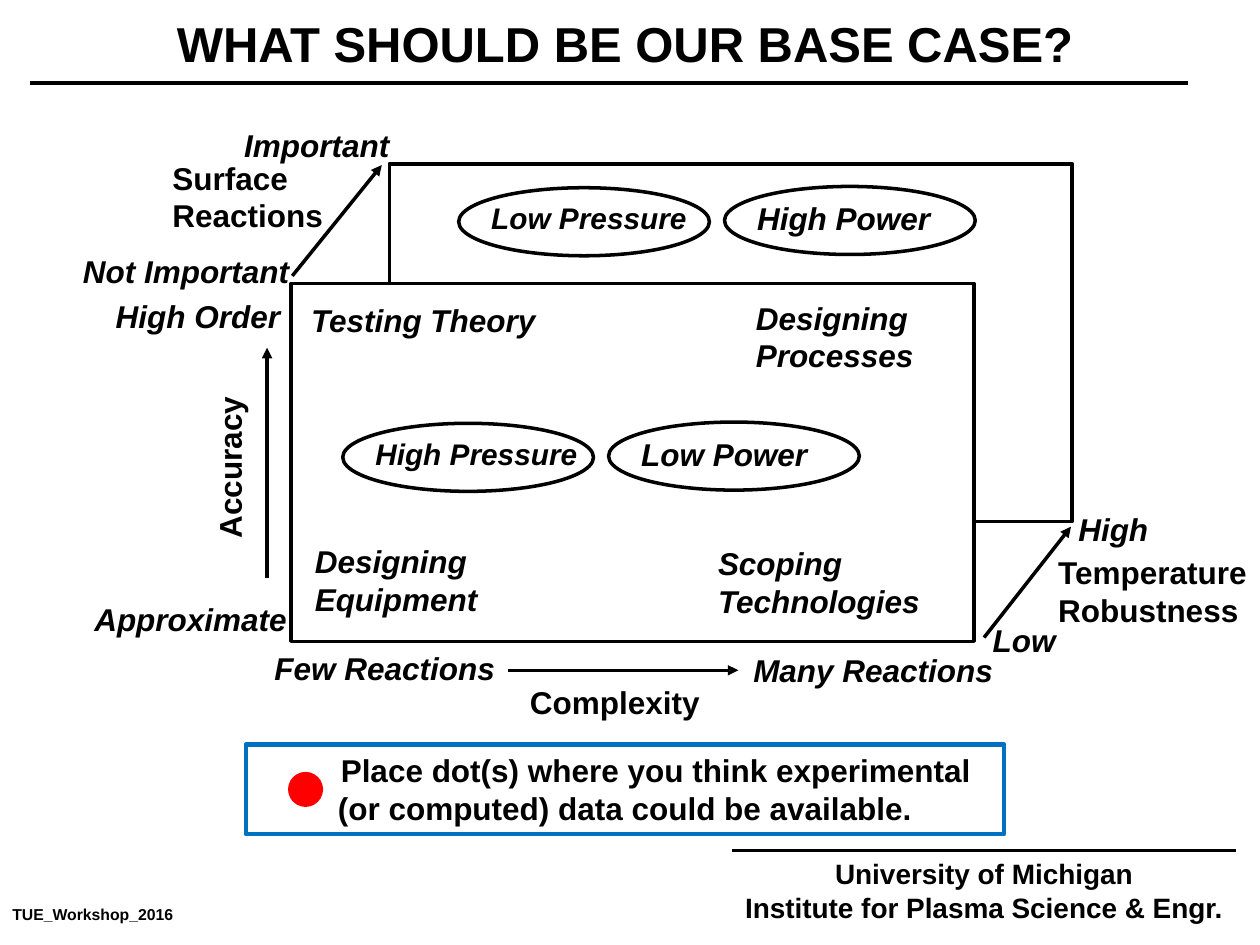
from dataclasses import dataclass

from lxml.etree import SubElement
from pptx import Presentation
from pptx.dml.color import RGBColor
from pptx.enum.shapes import MSO_CONNECTOR, MSO_SHAPE
from pptx.enum.text import MSO_ANCHOR, MSO_AUTO_SIZE, PP_ALIGN
from pptx.oxml.ns import qn
from pptx.util import Emu, Pt

EMU_PER_PX = 9144  # 100 px to the inch


@dataclass(frozen=True)
class Theme:
    font: str = "Arial"
    ink: RGBColor = RGBColor(0, 0, 0)
    paper: RGBColor = RGBColor(255, 255, 255)
    dot: RGBColor = RGBColor(255, 0, 0)
    frame: RGBColor = RGBColor(0, 0x70, 0xC0)
    title_size: int = 28
    label_size: int = 18
    tight_size: int = 17
    footer_size: int = 16
    tag_size: int = 9
    line_width: float = 2
    rule_width: float = 2.25
    frame_width: float = 2.5


THEME = Theme()


@dataclass(frozen=True)
class Box:
    left: int
    top: int
    width: int
    height: int

    def emu(self) -> tuple:
        return tuple(px(n) for n in (self.left, self.top, self.width, self.height))


@dataclass(frozen=True)
class Label:
    lines: tuple
    box: Box
    italic: bool = True
    size: int = THEME.label_size
    align: PP_ALIGN = PP_ALIGN.LEFT
    space_after: int = 6
    rotation: int = 0


@dataclass(frozen=True)
class Regime:
    """An oval with the name of an operating regime inside."""
    name: str
    left: int
    top: int
    size: int = THEME.label_size


@dataclass(frozen=True)
class Stroke:
    start: tuple
    end: tuple
    width: float = THEME.line_width
    arrow: bool = True


PLANES = (Box(309, 130, 542, 284), Box(231, 225, 542, 284))

REGIMES = (
    Regime("Low Pressure", 364, 149, THEME.tight_size),
    Regime("High Power", 575, 148),
    Regime("High Pressure", 272, 336, THEME.tight_size),
    Regime("Low Power", 483, 335),
)

STROKES = (
    Stroke((24, 66), (943, 66), THEME.rule_width, arrow=False),
    Stroke((581, 675), (981, 675), THEME.rule_width, arrow=False),
    Stroke((403, 532), (586, 532)),  # complexity
    Stroke((212, 459), (212, 276)),  # accuracy
    Stroke((232, 219), (303, 131)),  # surface reactions
    Stroke((781, 506), (850, 418)),  # temperature robustness
)

LABELS = (
    Label(("Testing Theory",), Box(237, 234, 229, 40)),
    Label(("Designing Processes",), Box(590, 232, 175, 71)),
    Label(("Designing Equipment",), Box(240, 425, 212, 71)),
    Label(("Scoping Technologies",), Box(560, 427, 212, 71)),
    Label(("Important",), Box(184, 95, 146, 40)),
    Label(("Not Important",), Box(56, 195, 195, 40)),
    Label(("High Order",), Box(82, 231, 219, 40)),
    Label(("Approximate",), Box(65, 471, 219, 40)),
    Label(("Few Reactions",), Box(208, 510, 219, 40)),
    Label(("Many Reactions",), Box(588, 512, 238, 40)),
    Label(("Low",), Box(778, 488, 80, 40)),
    Label(("High",), Box(846, 400, 91, 40)),
    Label(("Surface", "Reactions"), Box(127, 121, 238, 71), italic=False, space_after=0),
    Label(("Temperature", "Robustness"), Box(830, 434, 238, 71), italic=False, space_after=0),
    Label(("Complexity",), Box(382, 537, 212, 40), italic=False, align=PP_ALIGN.CENTER),
    Label(("Accuracy",), Box(76, 351, 212, 40), italic=False, align=PP_ALIGN.CENTER,
          rotation=-90),
    Label(("University of Michigan", "Institute for Plasma Science & Engr."),
          Box(575, 675, 412, 64), italic=False, size=THEME.footer_size,
          align=PP_ALIGN.CENTER, space_after=0),
    Label(("TUE_Workshop_2016",), Box(0, 713, 150, 25), italic=False,
          size=THEME.tag_size, space_after=0),
)


def px(length: int) -> Emu:
    return Emu(length * EMU_PER_PX)


def write(text_frame, label: Label) -> None:
    text_frame.word_wrap = True
    text_frame.auto_size = MSO_AUTO_SIZE.NONE
    text_frame.vertical_anchor = MSO_ANCHOR.TOP
    for number, line in enumerate(label.lines):
        paragraph = text_frame.add_paragraph() if number else text_frame.paragraphs[0]
        paragraph.alignment = label.align
        paragraph.space_after = Pt(label.space_after)
        run = paragraph.add_run()
        run.text = line
        run.font.name = THEME.font
        run.font.size = Pt(label.size)
        run.font.bold = True
        run.font.italic = label.italic
        run.font.color.rgb = THEME.ink


def add_label(slide, label: Label) -> None:
    shape = slide.shapes.add_textbox(*label.box.emu())
    shape.rotation = label.rotation
    write(shape.text_frame, label)


def add_outline(slide, kind: MSO_SHAPE, box: Box, fill: RGBColor | None = None,
                line: RGBColor = THEME.ink, width: float = THEME.line_width):
    shape = slide.shapes.add_shape(kind, *box.emu())
    shape.shadow.inherit = False
    if fill is None:
        shape.fill.background()
    else:
        shape.fill.solid()
        shape.fill.fore_color.rgb = fill
    shape.line.color.rgb = line
    shape.line.width = Pt(width)
    return shape


def add_regime(slide, regime: Regime) -> None:
    add_outline(slide, MSO_SHAPE.OVAL, Box(regime.left, regime.top, 199, 54))
    box = Box(regime.left + 16, regime.top + 5, 185, 40)
    add_label(slide, Label((regime.name,), box, size=regime.size))


def add_stroke(slide, stroke: Stroke) -> None:
    ends = [px(n) for n in stroke.start + stroke.end]
    connector = slide.shapes.add_connector(MSO_CONNECTOR.STRAIGHT, *ends)
    connector.line.color.rgb = THEME.ink
    connector.line.width = Pt(stroke.width)
    if stroke.arrow:
        SubElement(connector.line._get_or_add_ln(), qn("a:tailEnd"), type="triangle")
    SubElement(connector._element.spPr, qn("a:effectLst"))


def add_title(slide) -> None:
    title = slide.shapes.title
    box = Box(14, 6, 964, 57)
    title.left, title.top, title.width, title.height = box.emu()
    write(title.text_frame, Label(("WHAT SHOULD BE OUR BASE CASE?",), box, italic=False,
                                  size=THEME.title_size, align=PP_ALIGN.CENTER,
                                  space_after=0))


def add_callout(slide) -> None:
    """The framed request, its first line indented to clear the dot."""
    box = Box(195, 591, 602, 71)
    frame = add_outline(slide, MSO_SHAPE.RECTANGLE, box, line=THEME.frame,
                        width=THEME.frame_width)
    request = ("Place dot(s) where you think experimental "
               "(or computed) data could be available.")
    write(frame.text_frame, Label((request,), box, italic=False, align=PP_ALIGN.CENTER))
    properties = frame.text_frame.paragraphs[0]._p.get_or_add_pPr()
    properties.set("marL", "0")
    properties.set("indent", str(px(49)))
    add_outline(slide, MSO_SHAPE.OVAL, Box(230, 614, 25, 25), THEME.dot, THEME.dot)


def main() -> None:
    presentation = Presentation()
    presentation.slide_width, presentation.slide_height = px(1000), px(750)
    slide = presentation.slides.add_slide(presentation.slide_layouts[5])
    add_title(slide)
    for plane in PLANES:
        add_outline(slide, MSO_SHAPE.RECTANGLE, plane, THEME.paper)
    for regime in REGIMES:
        add_regime(slide, regime)
    for stroke in STROKES:
        add_stroke(slide, stroke)
    for label in LABELS:
        add_label(slide, label)
    add_callout(slide)
    presentation.save("out.pptx")


if __name__ == "__main__":
    main()
